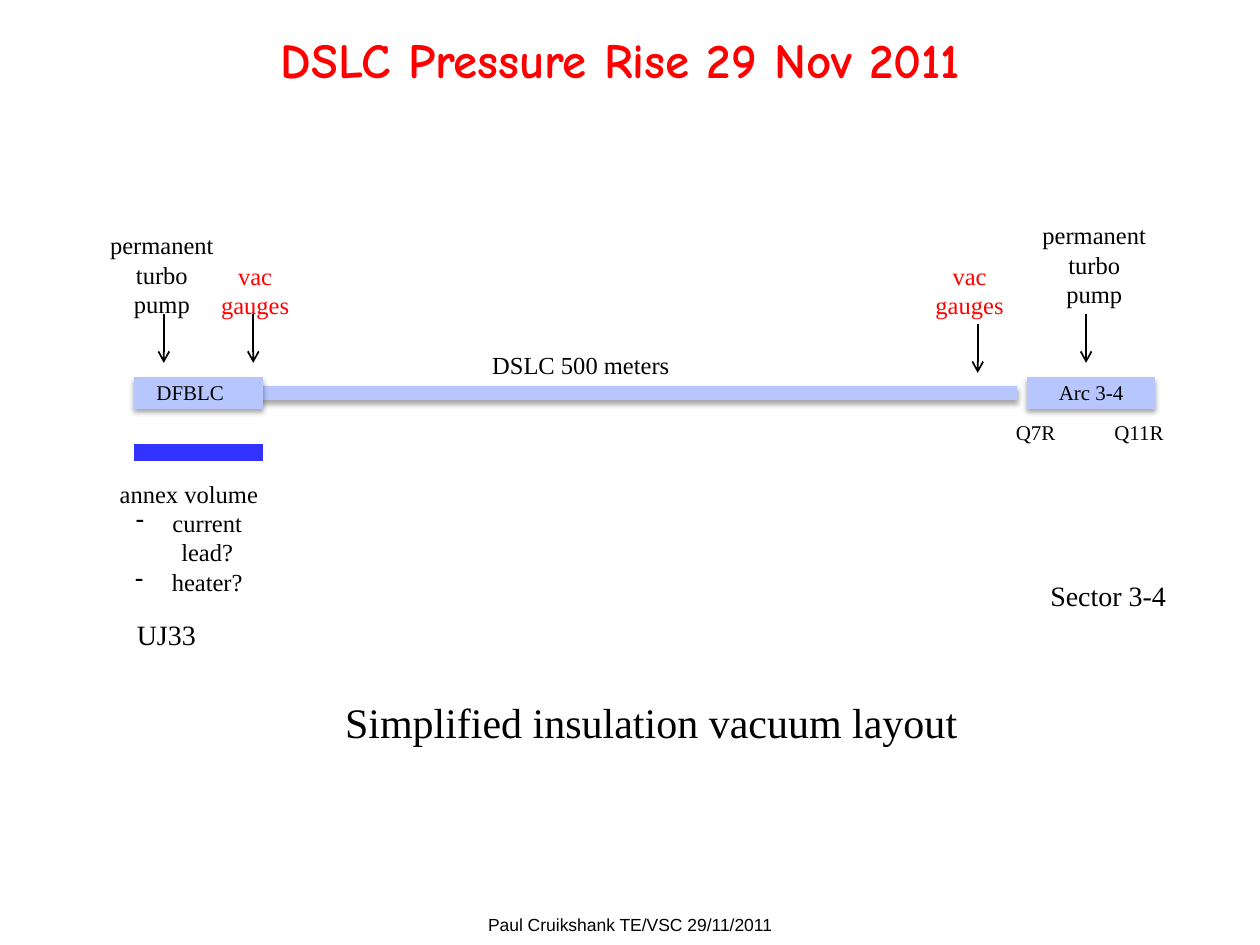
import pptx
import pptx.util
import pptx.dml.color
import pptx.enum.shapes
import pptx.enum.text
import pptx.oxml
import pptx.oxml.ns

Inches = pptx.util.Inches
Pt = pptx.util.Pt
ALIGN = pptx.enum.text.PP_ALIGN
ANCHOR = pptx.enum.text.MSO_ANCHOR
STRAIGHT = pptx.enum.shapes.MSO_CONNECTOR.STRAIGHT

COLORS = {"black": "000000", "red": "FF0000", "pale": "B7C6FE", "blue": "3333FF"}
SERIF = "Times New Roman"
PUMP = ["permanent", "turbo", "pump"]
GAUGE = ["vac", "gauges"]
SHADE = (
    '<a:outerShdw blurRad="39370" dist="22860" dir="5400000" rotWithShape="0">'
    '<a:srgbClr val="000000"><a:alpha val="35000"/></a:srgbClr></a:outerShdw>'
)


def hue(name):
    return pptx.dml.color.RGBColor.from_string(COLORS[name])


def node(tag, inner="", **attrs):
    """Make one DrawingML element with the given content and attributes."""
    pairs = "".join(f' {key}="{val}"' for key, val in attrs.items())
    space = pptx.oxml.ns.nsdecls("a")
    return pptx.oxml.parse_xml(f"<a:{tag} {space}{pairs}>{inner}</a:{tag}>")


def write(frame, lines, size=14, font=SERIF, color="black", bold=False,
          align=ALIGN.CENTER, dash=(), gap=None):
    """Fill a frame with lines; those listed in dash get a hyphen bullet."""
    for i, line in enumerate(lines):
        par = frame.paragraphs[0] if i == 0 else frame.add_paragraph()
        par.alignment = align
        if gap:
            par.line_spacing = gap
        if i in dash:
            props = par._p.get_or_add_pPr()
            indent = Inches(0.29)
            props.set("marL", str(indent))
            props.set("indent", str(-indent))
            props.append(node("buFontTx"))
            props.append(node("buChar", char="-"))
        run = par.add_run()
        run.text = line
        run.font.size = Pt(size)
        run.font.name = font
        run.font.bold = bold
        run.font.color.rgb = hue(color)


class Sketch:
    def __init__(self, slide):
        self.slide = slide

    def text(self, x, y, w, h, *lines, wrap=False, anchor=ANCHOR.TOP, **form):
        box = self.slide.shapes.add_textbox(Inches(x), Inches(y), Inches(w), Inches(h))
        frame = box.text_frame
        frame.word_wrap = wrap
        frame.vertical_anchor = anchor
        write(frame, lines, **form)

    def line(self, x, y, x2, y2, color, width):
        link = self.slide.shapes.add_connector(
            STRAIGHT, Inches(x), Inches(y), Inches(x2), Inches(y2))
        link.line.color.rgb = hue(color)
        link.line.width = Pt(width)
        return link

    def bar(self, x, x2, y, color, width, shade=True):
        link = self.line(x, y, x2, y, color, width)
        link._element.spPr.append(node("effectLst", SHADE if shade else ""))

    def arrow(self, x, y):
        link = self.line(x, y, x, y + 0.39, "black", 1)
        link.line._get_or_add_ln().append(node("tailEnd", type="arrow"))
        link._element.spPr.append(node("effectLst"))


def main():
    deck = pptx.Presentation()
    deck.slide_width, deck.slide_height = Inches(10), Inches(7.5)
    art = Sketch(deck.slides.add_slide(deck.slide_layouts[6]))

    art.text(0.83, 0, 8.19, 0.99, "DSLC Pressure Rise 29 Nov 2011", wrap=True,
             anchor=ANCHOR.MIDDLE, size=28, font="Comic Neue", color="red",
             bold=True, gap=0.9)
    art.text(2.25, 7.17, 5.5, 0.33, "Paul Cruikshank TE/VSC 29/11/2011",
             anchor=ANCHOR.MIDDLE, size=10, font="Arial")

    # Vacuum line with its two end volumes and the annex below
    art.bar(2.01, 8.07, 3.12, "pale", 8)
    art.bar(8.15, 9.17, 3.12, "pale", 18)
    art.bar(1.06, 2.09, 3.12, "pale", 18)
    art.bar(1.06, 2.09, 3.59, "blue", 10, shade=False)

    for x, y in ((0.77, 1.78), (8.17, 1.7)):
        art.text(x, y, 1.03, 0.81, *PUMP)
    for x in (1.65, 7.32):
        art.text(x, 2.02, 0.75, 0.57, *GAUGE, color="red")
    for x, y in ((1.3, 2.49), (2.01, 2.49), (7.76, 2.57), (8.62, 2.49)):
        art.arrow(x, y)

    art.text(3.8, 2.73, 1.62, 0.34, "DSLC 500 meters")
    for x, y, w, name in (
        (1.14, 2.96, 0.74, "DFBLC"),
        (8.3, 2.96, 0.72, "Arc 3-4"),
        (7.96, 3.28, 0.52, "Q7R"),
        (8.74, 3.28, 0.6, "Q11R"),
    ):
        art.text(x, y, w, 0.3, name, size=12)

    art.text(0.83, 3.75, 1.34, 1.04, "annex volume", "current lead?", "heater?",
             wrap=True, dash=(1, 2))
    art.text(0.98, 4.85, 0.68, 0.37, "UJ33", size=16)
    art.text(8.23, 4.54, 1.13, 0.37, "Sector 3-4", size=16)
    art.text(2.64, 5.48, 5.1, 0.5, "Simplified insulation vacuum layout",
             size=24, align=ALIGN.LEFT)

    deck.save("out.pptx")


if __name__ == "__main__":
    main()
